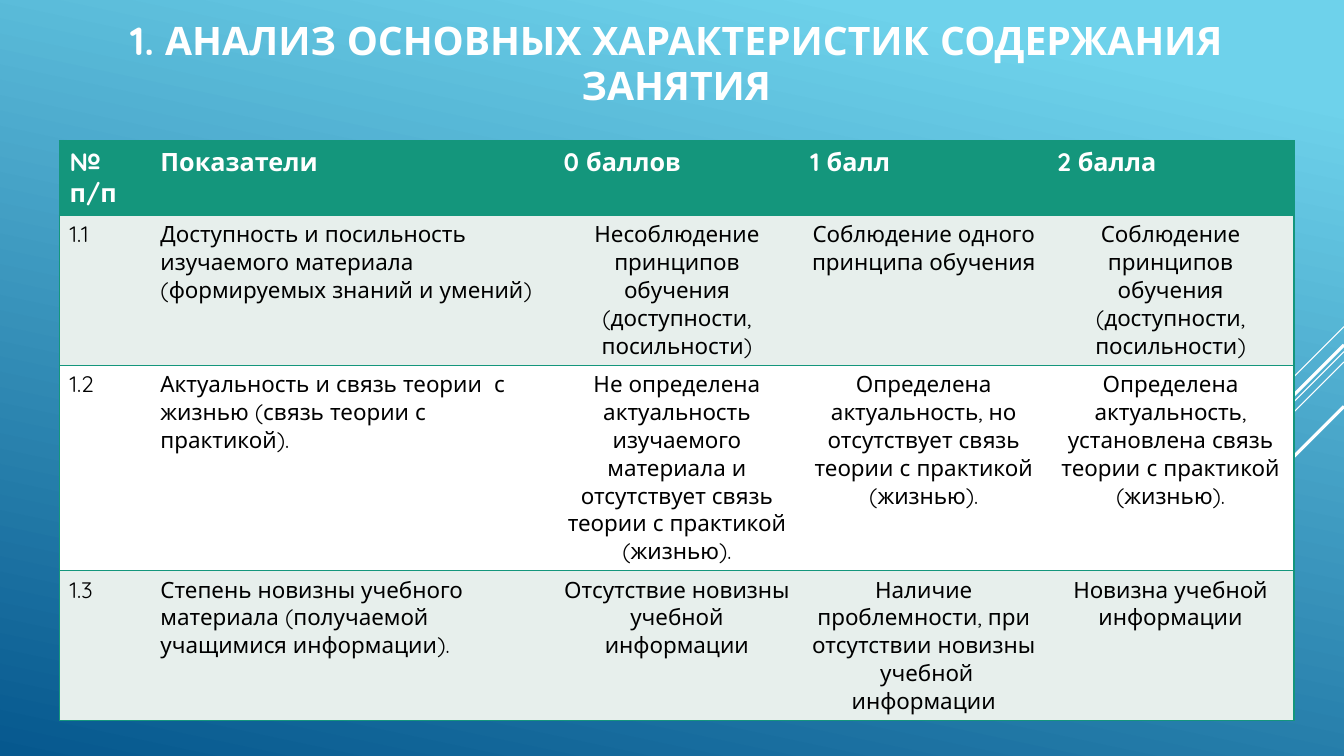
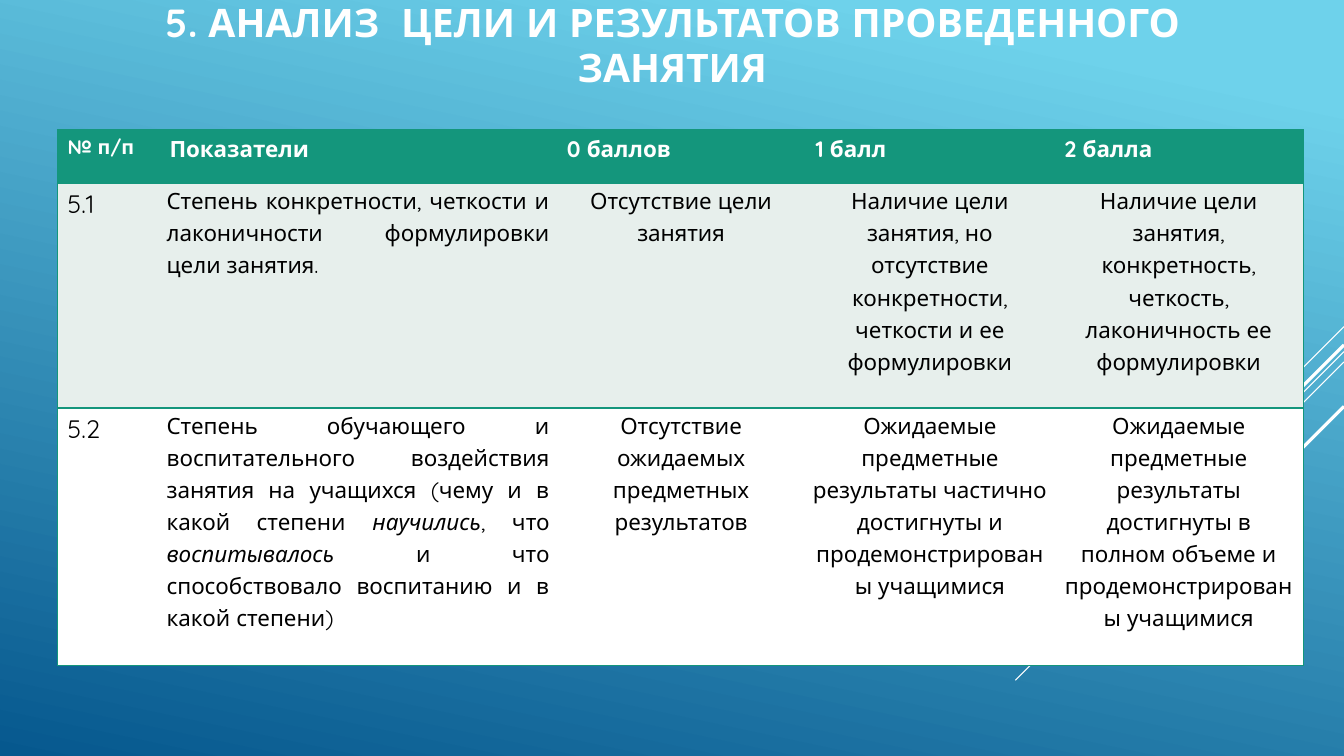
from dataclasses import dataclass
from typing import Any, NamedTuple

from pptx import Presentation
from pptx.dml.color import RGBColor
from pptx.enum.shapes import MSO_CONNECTOR
from pptx.enum.text import MSO_ANCHOR, MSO_AUTO_SIZE, PP_ALIGN
from pptx.oxml.ns import qn
from pptx.oxml.xmlchemy import OxmlElement
from pptx.slide import Slide, SlideLayout, SlideMaster
from pptx.table import _Cell as Cell
from pptx.util import Cm, Pt

FONT = "Quicksand"
WHITE = RGBColor(0xFF, 0xFF, 0xFF)
BLACK = RGBColor(0x00, 0x00, 0x00)
GREEN = RGBColor(0x14, 0x96, 0x7C)
PALE_GREEN = RGBColor(0xE7, 0xEF, 0xEC)
SKY = RGBColor(0x6E, 0xD2, 0xEB)
DEEP_BLUE = RGBColor(0x06, 0x58, 0x8E)

SLIDE_WIDTH, SLIDE_HEIGHT = 33.87, 19.05
TITLE_HEIGHT = 4.19
TITLE_ONLY_LAYOUT = 5
HEADINGS = ("№ п/п", "Показатели", "0 баллов", "1 балл", "2 балла")


class Ray(NamedTuple):
    """A diagonal line running down and left from the right edge, in cm."""

    top: float
    length: float
    weight: float


class Box(NamedTuple):
    """Left, top and width of an element, in cm."""

    left: float
    top: float
    width: float


@dataclass(frozen=True)
class ScoreSlide:
    """Contents and measures of one slide with a scoring table."""

    title: str
    title_box: Box
    title_bottom_inset: float
    table_left: float
    table_top: float
    columns: tuple[float, ...]
    row_heights: tuple[float, ...]
    header_sizes: tuple[int, int]
    number_size: int
    indicator_align: PP_ALIGN
    line_spacing: float
    body_insets: dict[str, Cm]
    rows: tuple[tuple[str, ...], ...]


RAYS = (
    Ray(8.23, 2.54, 0.75),
    Ray(8.86, 8.28, 0.75),
    Ray(9.12, 5.27, 0.75),
    Ray(8.69, 4.85, 2.25),
    Ray(10.24, 3.53, 2.25),
)

SCORE_SLIDES = (
    ScoreSlide(
        title="1. АНАЛИЗ ОСНОВНЫХ ХАРАКТЕРИСТИК СОДЕРЖАНИЯ ЗАНЯТИЯ",
        title_box=Box(1.02, 0, 32.05),
        title_bottom_inset=1.07,
        table_left=1.5,
        table_top=3.55,
        columns=(2.29, 10.16, 6.22, 6.22, 6.22),
        row_heights=(1.88, 3.76, 5.18, 3.76),
        header_sizes=(18, 18),
        number_size=16,
        indicator_align=PP_ALIGN.LEFT,
        line_spacing=1.0,
        body_insets={},
        rows=(
            (
                "1.1",
                "Доступность и посильность изучаемого материала (формируемых знаний и умений)",
                "Несоблюдение принципов обучения (доступности, посильности)",
                "Соблюдение одного принципа обучения",
                "Соблюдение принципов обучения (доступности, посильности)",
            ),
            (
                "1.2",
                "Актуальность и связь теории  с жизнью (связь теории с практикой).",
                "Не определена актуальность изучаемого материала и отсутствует связь "
                "теории с практикой (жизнью).",
                "Определена актуальность, но отсутствует связь теории с практикой (жизнью).",
                "Определена актуальность, установлена связь теории с практикой (жизнью).",
            ),
            (
                "1.3",
                "Степень новизны учебного материала (получаемой учащимися информации).",
                "Отсутствие новизны учебной информации",
                "Наличие проблемности, при отсутствии новизны  учебной информации",
                "Новизна учебной информации",
            ),
        ),
    ),
    ScoreSlide(
        title="5. АНАЛИЗ  ЦЕЛИ И РЕЗУЛЬТАТОВ ПРОВЕДЕННОГО ЗАНЯТИЯ",
        title_box=Box(1.45, -0.91, 30.99),
        title_bottom_inset=0.13,
        table_left=1.45,
        table_top=3.27,
        columns=(2.57, 10.01, 6.27, 6.27, 6.27),
        row_heights=(1.35, 5.66, 6.48),
        header_sizes=(14, 16),
        number_size=18,
        indicator_align=PP_ALIGN.JUSTIFY,
        line_spacing=1.15,
        body_insets={
            "margin_left": Cm(0.18),
            "margin_top": Cm(0),
            "margin_right": Cm(0.18),
            "margin_bottom": Cm(0),
        },
        rows=(
            (
                "5.1",
                "Степень конкретности, четкости и лаконичности формулировки цели занятия.",
                "Отсутствие цели занятия",
                "Наличие цели занятия, но отсутствие конкретности, четкости и ее формулировки",
                "Наличие цели занятия, конкретность, четкость, лаконичность ее формулировки",
            ),
            (
                "5.2",
                "Степень обучающего и воспитательного воздействия занятия на учащихся "
                "(чему и в какой степени *научились*, что *воспитывалось* и что "
                "способствовало воспитанию и в какой степени)",
                "Отсутствие ожидаемых предметных результатов",
                "Ожидаемые предметные результаты частично достигнуты и "
                "продемонстрированы учащимися",
                "Ожидаемые предметные результаты достигнуты в полном объеме и "
                "продемонстрированы учащимися",
            ),
        ),
    ),
)


def apply_formats(target: Any, formats: dict[str, Any]) -> None:
    """Set every named attribute of the target."""
    for name, value in formats.items():
        setattr(target, name, value)


def write_text(
    text_frame: Any, text: str, size: int, color: RGBColor, bold: bool,
    align: PP_ALIGN, line_spacing: float,
) -> None:
    """Write one paragraph, with parts between asterisks in italics."""
    paragraph = text_frame.paragraphs[0]
    apply_formats(paragraph, {"alignment": align, "line_spacing": line_spacing})
    for index, part in enumerate(text.split("*")):
        run = paragraph.add_run()
        run.text = part
        formats = {"name": FONT, "size": Pt(size), "bold": bold, "italic": index % 2 == 1}
        apply_formats(run.font, formats)
        run.font.color.rgb = color


def paint_background(master: SlideMaster) -> None:
    """Give the master its blue gradient."""
    fill = master.background.fill
    fill.gradient()
    fill.gradient_angle = 258
    for stop, position, color in zip(fill.gradient_stops, (0.1, 1.0), (SKY, DEEP_BLUE)):
        stop.position = position
        stop.color.rgb = color


def add_rays(slide: Slide, layout: SlideLayout) -> None:
    """Draw the diagonal rays and hand them to the layout."""
    for ray in RAYS:
        connector = slide.shapes.add_connector(
            MSO_CONNECTOR.STRAIGHT,
            Cm(SLIDE_WIDTH), Cm(ray.top),
            Cm(SLIDE_WIDTH - ray.length), Cm(ray.top + ray.length),
        )
        connector.line.color.rgb = WHITE
        connector.line.width = Pt(ray.weight)
        connector.element.spPr.append(OxmlElement("a:effectLst"))
        layout.shapes.element.append(connector.element)


def add_title(slide: Slide, content: ScoreSlide) -> None:
    """Fill and place the title placeholder."""
    title = slide.shapes.title
    box = content.title_box
    apply_formats(title, {
        "left": Cm(box.left), "top": Cm(box.top),
        "width": Cm(box.width), "height": Cm(TITLE_HEIGHT),
    })
    apply_formats(title.text_frame, {
        "word_wrap": True,
        "auto_size": MSO_AUTO_SIZE.NONE,
        "vertical_anchor": MSO_ANCHOR.MIDDLE,
        "margin_bottom": Cm(content.title_bottom_inset),
    })
    write_text(title.text_frame, content.title, 28, WHITE, True, PP_ALIGN.CENTER, 0.95)


def set_borders(cell: Cell, is_first: bool, is_last: bool) -> None:
    """Rule the cell above and below, and at the outer sides of the table."""
    properties = cell._tc.get_or_add_tcPr()
    sides = {"a:lnL": is_first, "a:lnR": is_last, "a:lnT": True, "a:lnB": True}
    for tag, visible in sides.items():
        line = OxmlElement(tag)
        line.set("w", str(Pt(1)))
        fill = OxmlElement("a:solidFill" if visible else "a:noFill")
        if visible:
            color = OxmlElement("a:srgbClr")
            color.set("val", str(GREEN))
            fill.append(color)
        line.append(fill)
        properties.append(line)


def format_cell(cell: Cell, text: str, row: int, column: int, content: ScoreSlide) -> None:
    """Fill one cell according to its row and column."""
    is_header, is_number = row == 0, column == 0
    set_borders(cell, is_number, column == len(HEADINGS) - 1)
    cell.fill.solid()
    align, size, spacing = PP_ALIGN.LEFT, 16, 1.0
    if is_header:
        cell.fill.fore_color.rgb = GREEN
        size = content.header_sizes[0 if is_number else 1]
    else:
        cell.fill.fore_color.rgb = PALE_GREEN if row % 2 else WHITE
        if is_number:
            size = content.number_size
        else:
            align = content.indicator_align if column == 1 else PP_ALIGN.CENTER
            spacing = content.line_spacing
            apply_formats(cell, content.body_insets)
    color = WHITE if is_header else BLACK
    write_text(cell.text_frame, text, size, color, is_header, align, spacing)


def add_score_table(slide: Slide, content: ScoreSlide) -> None:
    """Add the scoring table."""
    rows = (HEADINGS, *content.rows)
    table = slide.shapes.add_table(
        len(rows), len(HEADINGS),
        Cm(content.table_left), Cm(content.table_top),
        Cm(sum(content.columns)), Cm(sum(content.row_heights)),
    ).table
    apply_formats(table, {"first_row": False, "horz_banding": False})
    for column, width in zip(table.columns, content.columns):
        column.width = Cm(width)
    for row, height in zip(table.rows, content.row_heights):
        row.height = Cm(height)
    for row_index, texts in enumerate(rows):
        for column_index, text in enumerate(texts):
            cell = table.cell(row_index, column_index)
            format_cell(cell, text, row_index, column_index, content)


def main() -> None:
    """Build and save the presentation."""
    presentation = Presentation()
    apply_formats(presentation, {
        "slide_width": Cm(SLIDE_WIDTH), "slide_height": Cm(SLIDE_HEIGHT),
    })
    paint_background(presentation.slide_master)
    layout = presentation.slide_layouts[TITLE_ONLY_LAYOUT]
    slides = [presentation.slides.add_slide(layout) for _ in SCORE_SLIDES]
    add_rays(slides[0], layout)
    for slide, content in zip(slides, SCORE_SLIDES):
        add_title(slide, content)
        add_score_table(slide, content)
    presentation.save("out.pptx")


if __name__ == "__main__":
    main()
